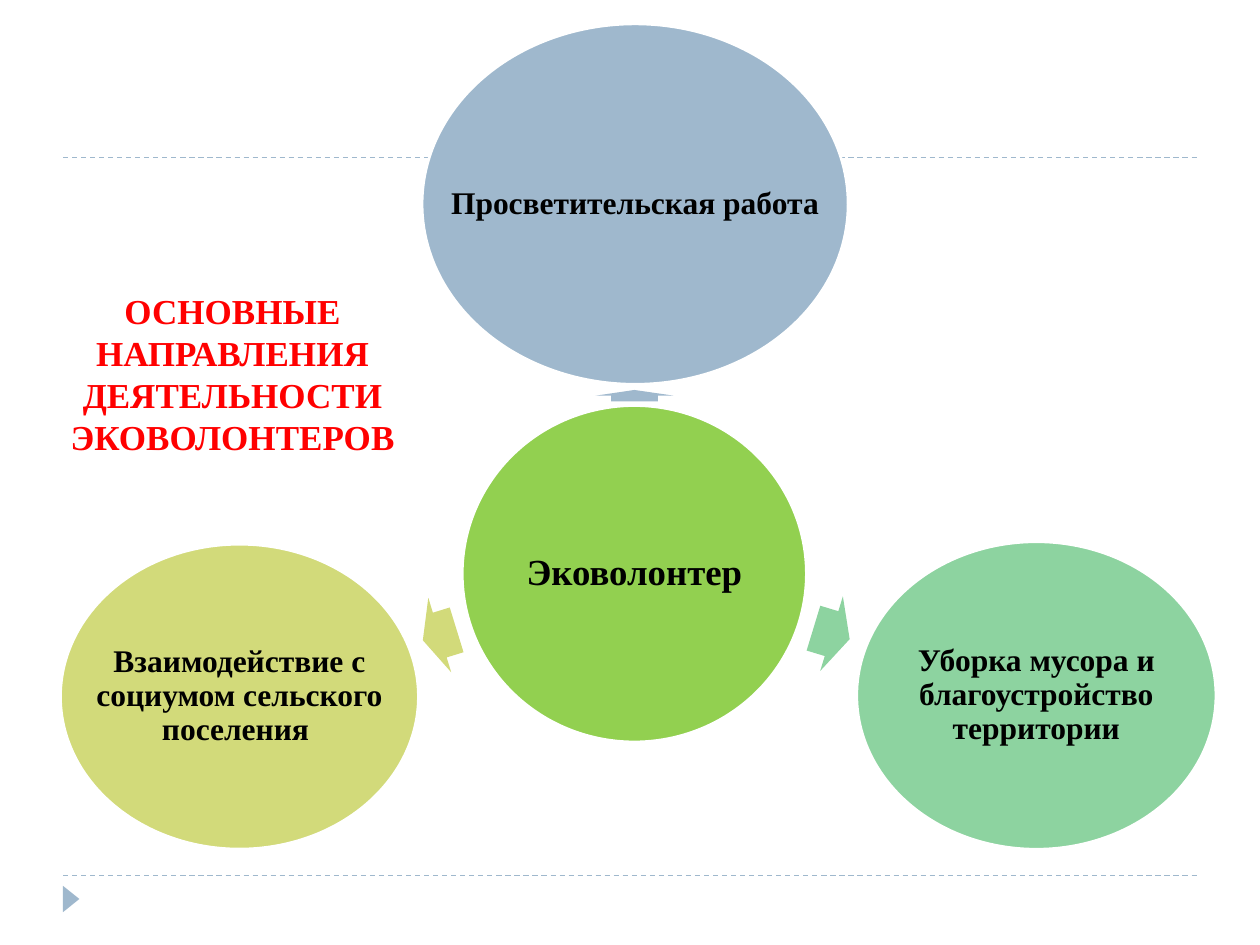
"""Build a slide with a hub circle and three volunteer activity circles."""
from dataclasses import dataclass

import pptx
import pptx.dml.color
import pptx.enum.dml
import pptx.enum.shapes
import pptx.enum.text
import pptx.oxml
import pptx.slide
import pptx.util

Pt = pptx.util.Pt
Kind = pptx.enum.shapes.MSO_SHAPE
Box = tuple[float, float, float, float]
BLUE = "9FB8CD"
FONT = {"name": "Times New Roman", "bold": True}
INSETS = ("margin_left", "margin_right", "margin_top", "margin_bottom")


@dataclass
class Disc:
    text: str
    box: Box
    fill: str
    size: float = 18


@dataclass
class Mark:
    kind: Kind
    box: Box
    turn: float
    fill: str


DISCS = [
    Disc("Эковолонтер", (264.2, 231.8, 196.6, 192.2), "92D050", 21),
    Disc("Просветительская работа", (241.2, 13.7, 243.4, 205.9), BLUE),
    Disc("Уборка мусора и благоустройство территории",
         (489.6, 309.6, 205.2, 175.7), "8DD3A0"),
    Disc("Взаимодействие с социумом сельского поселения ",
         (34.6, 311, 204.5, 174.2), "D2DA7A"),
]
MARKS = [
    Mark(Kind.ISOSCELES_TRIANGLE, (33.1, 509, 15.1, 9.4), 90, BLUE),
    Mark(Kind.RIGHT_ARROW, (359.3, 203.8, 6.5, 44.6), 269.9, BLUE),
    Mark(Kind.RIGHT_ARROW, (464.4, 339.8, 21.6, 44.6), 16.9, "8DD3A0"),
    Mark(Kind.RIGHT_ARROW, (241.2, 340.6, 20.2, 44.6), 162.9, "D2DA7A"),
]


def color(code: str) -> pptx.dml.color.RGBColor:
    return pptx.dml.color.RGBColor.from_string(code)


def apply(item: object, values: dict) -> None:
    for key, value in values.items():
        setattr(item, key, value)


def rule(slide: pptx.slide.Slide, y: float) -> None:
    line = slide.shapes.add_connector(
        pptx.enum.shapes.MSO_CONNECTOR.STRAIGHT, Pt(36), Pt(y), Pt(684), Pt(y))
    apply(line.line, {"width": Pt(0.75),
                      "dash_style": pptx.enum.dml.MSO_LINE.DASH})
    line.line.color.rgb = color(BLUE)
    line._element.spPr.append(pptx.oxml.parse_xml(
        '<a:effectLst xmlns:a='
        '"http://schemas.openxmlformats.org/drawingml/2006/main"/>'))


def shape(slide: pptx.slide.Slide, kind: Kind, box: Box, fill: str,
          edge: float = 0, turn: float = 0) -> None:
    item = slide.shapes.add_shape(kind, *map(Pt, box))
    item.shadow.inherit = False
    item.rotation = turn
    item.fill.solid()
    item.fill.fore_color.rgb = color(fill)
    if edge:
        item.line.width = Pt(edge)
        item.line.color.rgb = color("FFFFFF")
    else:
        item.line.fill.background()
    if kind == Kind.RIGHT_ARROW:
        item.adjustments[0] = 0.6


def label(slide: pptx.slide.Slide, text: str, box: Box, size: float,
          tint: str, frame: dict, para: dict) -> None:
    body = slide.shapes.add_textbox(*map(Pt, box)).text_frame
    apply(body, {"word_wrap": True, **frame})
    first = body.paragraphs[0]
    apply(first, {"alignment": pptx.enum.text.PP_ALIGN.CENTER, **para})
    run = first.add_run()
    run.text = text
    apply(run.font, {**FONT, "size": Pt(size)})
    run.font.color.rgb = color(tint)


def main() -> None:
    deck = pptx.Presentation()
    apply(deck, {"slide_width": Pt(720), "slide_height": Pt(540)})
    slide = deck.slides.add_slide(deck.slide_layouts[6])
    for y in (500.4, 90):
        rule(slide, y)
    for mark in MARKS:
        shape(slide, mark.kind, mark.box, mark.fill, turn=mark.turn)
    frame = {"vertical_anchor": pptx.enum.text.MSO_ANCHOR.MIDDLE,
             **dict.fromkeys(INSETS, Pt(2))}
    for disc in DISCS:
        shape(slide, Kind.OVAL, disc.box, disc.fill, edge=1.5)
        label(slide, disc.text, disc.box, disc.size, "000000", frame,
              {"line_spacing": 0.9})
    label(slide, "ОСНОВНЫЕ НАПРАВЛЕНИЯ ДЕЯТЕЛЬНОСТИ ЭКОВОЛОНТЕРОВ",
          (25.2, 162, 215.3, 104.4), 20, "FF0000",
          {"auto_size": pptx.enum.text.MSO_AUTO_SIZE.SHAPE_TO_FIT_TEXT}, {})
    deck.save("out.pptx")


if __name__ == "__main__":
    main()
